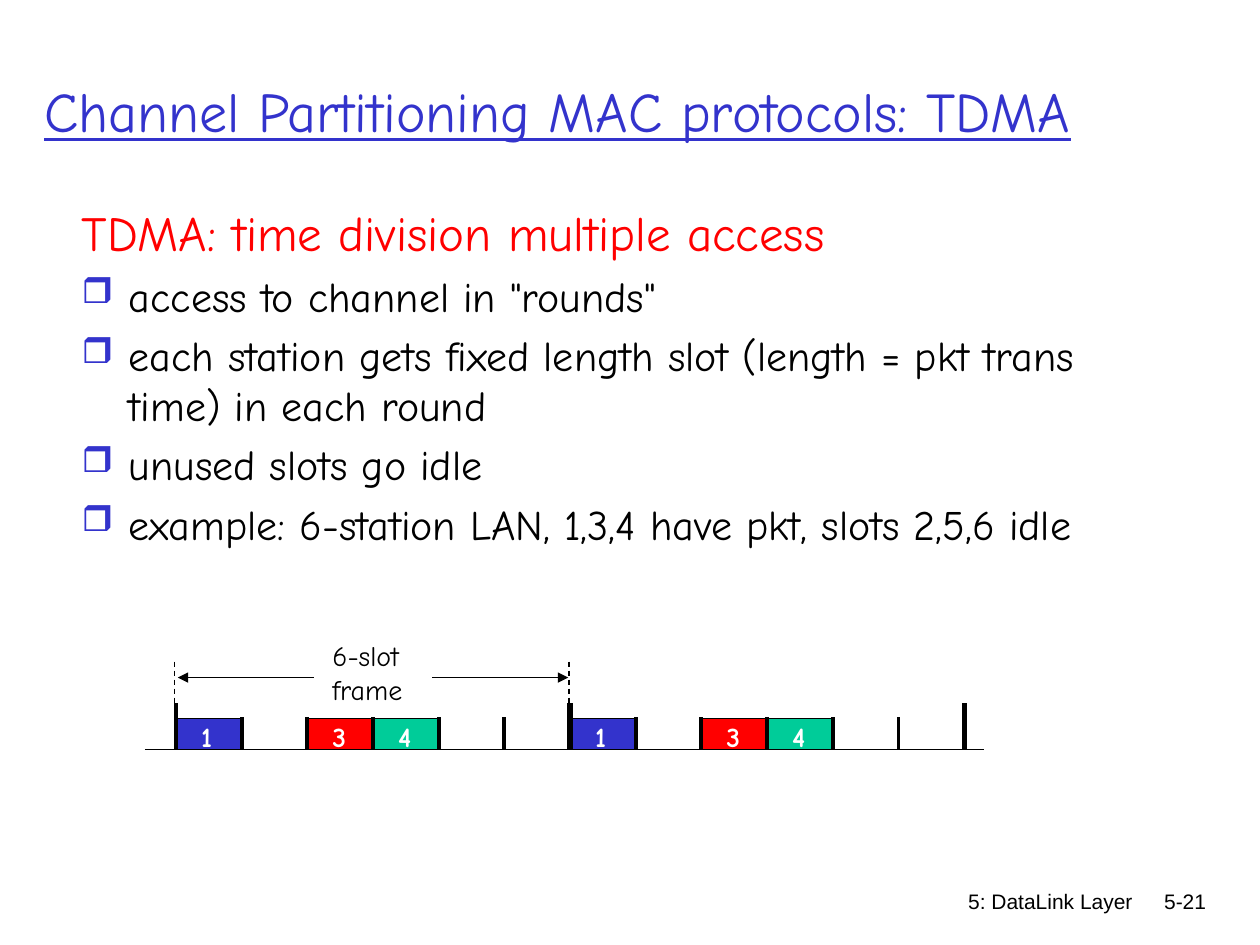
"""Build the TDMA channel partitioning slide."""
import pptx
import pptx.dml.color
import pptx.enum.dml
import pptx.enum.shapes
import pptx.enum.text
import pptx.oxml.ns
import pptx.util
from lxml import etree

Pt = pptx.util.Pt
ALIGN = pptx.enum.text.PP_ALIGN
ANCHOR = pptx.enum.text.MSO_ANCHOR
BLACK, WHITE, BLUE, RED, GREEN = "000000", "FFFFFF", "3333CC", "FF0000", "00CC99"
COMIC, ARIAL = "Comic Neue", "Arial"

TITLE = "Channel Partitioning MAC protocols: TDMA"
HEADING = "TDMA: time division multiple access"
BULLETS = [
    "access to channel in \"rounds\"",
    "each station gets fixed length slot (length = pkt trans time) in each round",
    "unused slots go idle",
    "example: 6-station LAN, 1,3,4 have pkt, slots 2,5,6 idle",
]
FRAME_LABEL = ["6-slot", "frame"]
FOOTERS = [("5: DataLink Layer", 426.2, 228.2), ("5-21", 643, 53.3)]
BUSY_SLOTS = {1: BLUE, 3: RED, 4: GREEN}
SLOTS_PER_FRAME, FRAMES = 6, 2

AXIS_LEFT, AXIS_RIGHT, AXIS_Y = 82.8, 562.3, 428.4
FIRST_SLOT, SLOT_WIDTH, SLOT_HEIGHT = 100.6, 37.53, 18
FRAME_TICK = 26.6
FRAME_WIDTH = SLOT_WIDTH * SLOTS_PER_FRAME
ARROW_Y, ARROW_LENGTH = 387.2, 77.8
GUIDE_TOP, GUIDE_BOTTOM = 378, 402


def color(value):
    return pptx.dml.color.RGBColor.from_string(value)


def add_child(parent, tag, **attributes):
    child = etree.SubElement(parent, pptx.oxml.ns.qn(tag))
    for name, value in attributes.items():
        child.set(name, value)
    return child


def write(paragraph, text, ink, **format_values):
    run = paragraph.add_run()
    run.text = text
    run.font.color.rgb = color(ink)
    for name, value in format_values.items():
        setattr(run.font, name, value)


def add_text(slide, box, lines, ink, align=ALIGN.LEFT, wrap=False, **format_values):
    shape = slide.shapes.add_textbox(*map(Pt, box))
    shape.text_frame.word_wrap = wrap
    for index, line in enumerate(lines):
        paragraph = shape.text_frame.add_paragraph() if index else shape.text_frame.paragraphs[0]
        paragraph.alignment = align
        write(paragraph, line, ink, **format_values)
    return shape


def add_line(slide, start, end, width=0.75, dashed=False, arrow=False):
    connector = slide.shapes.add_connector(
        pptx.enum.shapes.MSO_CONNECTOR.STRAIGHT, *map(Pt, start + end))
    connector.line.color.rgb = color(BLACK)
    connector.line.width = Pt(width)
    if dashed:
        connector.line.dash_style = pptx.enum.dml.MSO_LINE.DASH
    if arrow:
        add_child(connector.line._get_or_add_ln(), "a:tailEnd", type="triangle")
    add_child(connector._element.spPr, "a:effectLst")


def add_title(slide):
    title = slide.shapes.title
    box = {"left": 18, "top": 18, "width": 679.7, "height": 90}
    for name, value in box.items():
        setattr(title, name, Pt(value))
    frame = title.text_frame
    frame.vertical_anchor = ANCHOR.MIDDLE
    frame.auto_size = pptx.enum.text.MSO_AUTO_SIZE.NONE
    frame.paragraphs[0].alignment = ALIGN.LEFT
    write(frame.paragraphs[0], TITLE, BLUE, name=COMIC, size=Pt(32), underline=True)


def add_body(slide):
    body = add_text(slide, (39.6, 112.3, 612, 230.4), [HEADING], RED, wrap=True,
                    name=COMIC, size=Pt(28))
    frame = body.text_frame
    frame.paragraphs[0].space_before = Pt(5.6)
    for text in BULLETS:
        paragraph = frame.add_paragraph()
        paragraph.space_before = Pt(5)
        write(paragraph, text, BLACK, name=COMIC, size=Pt(24))
        properties = paragraph._p.get_or_add_pPr()
        properties.set("marL", str(Pt(27)))
        properties.set("indent", str(-Pt(27)))
        add_child(add_child(properties, "a:buClr"), "a:srgbClr", val=BLUE)
        add_child(properties, "a:buSzPct", val="85000")
        add_child(properties, "a:buChar", char="❒")


def add_busy_slot(slide, left, number, fill):
    top = AXIS_Y - SLOT_HEIGHT
    slot = slide.shapes.add_shape(pptx.enum.shapes.MSO_SHAPE.RECTANGLE,
                                  *map(Pt, (left, top, SLOT_WIDTH, SLOT_HEIGHT)))
    slot.shadow.inherit = False
    slot.fill.solid()
    slot.fill.fore_color.rgb = color(fill)
    slot.line.color.rgb = color(BLACK)
    slot.line.width = Pt(0.75)
    add_text(slide, (left + 7.2, 407.5, 24.5, 26.6), [str(number)], WHITE,
             name=COMIC, size=Pt(16), bold=True)


def add_timeline(slide):
    add_line(slide, (AXIS_LEFT, AXIS_Y), (AXIS_RIGHT, AXIS_Y))
    for frame in range(FRAMES):
        for number, fill in BUSY_SLOTS.items():
            left = FIRST_SLOT + frame * FRAME_WIDTH + (number - 1) * SLOT_WIDTH
            add_busy_slot(slide, left, number, fill)
    for tick in range(SLOTS_PER_FRAME * FRAMES + 1):
        x = FIRST_SLOT + tick * SLOT_WIDTH
        starts_frame = tick % SLOTS_PER_FRAME == 0
        height = FRAME_TICK if starts_frame else SLOT_HEIGHT + 0.5
        width = 3 if starts_frame and tick else 2.25
        add_line(slide, (x, AXIS_Y - height), (x, AXIS_Y), width)


def add_frame_span(slide):
    add_text(slide, (182.9, 361.4, 59.8, 46.1), FRAME_LABEL, BLACK, name=COMIC, size=Pt(16))
    for x, direction in ((FIRST_SLOT, 1), (FIRST_SLOT + FRAME_WIDTH, -1)):
        tip = x + direction
        add_line(slide, (tip + direction * ARROW_LENGTH, ARROW_Y), (tip, ARROW_Y), arrow=True)
        add_line(slide, (x - 0.7, GUIDE_TOP), (x - 0.7, GUIDE_BOTTOM), dashed=True)


def main():
    presentation = pptx.Presentation()
    presentation.slide_width, presentation.slide_height = Pt(720), Pt(540)
    slide = presentation.slides.add_slide(presentation.slide_layouts[5])
    for text, left, width in FOOTERS:
        add_text(slide, (left, 504, width, 36), [text], BLACK, ALIGN.RIGHT, True,
                 name=ARIAL, size=Pt(12))
    add_title(slide)
    add_body(slide)
    add_timeline(slide)
    add_frame_span(slide)
    presentation.save("out.pptx")


if __name__ == "__main__":
    main()
